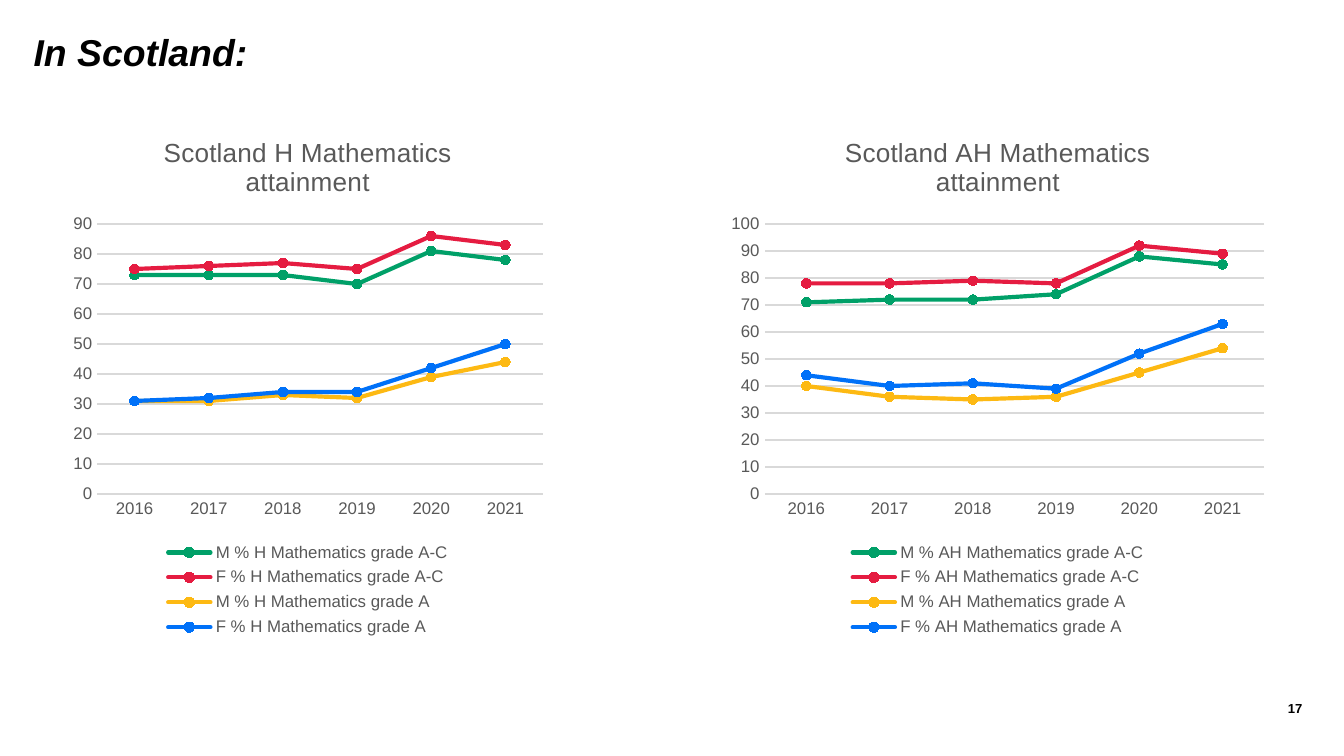
from lxml import etree
from pptx import Presentation
from pptx.chart.data import CategoryChartData
from pptx.dml.color import RGBColor
from pptx.enum.chart import (XL_CHART_TYPE, XL_LEGEND_POSITION as LegendPos,
                             XL_MARKER_STYLE as Marker, XL_TICK_MARK as Tick)
from pptx.enum.text import PP_ALIGN as Align
from pptx.oxml.ns import qn
from pptx.util import Inches, Pt

WIDTH = 10
HEIGHT = WIDTH * 9 / 16
FONT = "Arial"
BLACK, GREY, GRID = "000000", "595959", "D9D9D9"
YEARS = ["2016", "2017", "2018", "2019", "2020", "2021"]
CHART_TOP, CHART_HEIGHT = 0.84, 3.94

# Series label pattern and colour, in drawing order
GROUPS = [("M % {} Mathematics grade A-C", "00A068"),
          ("F % {} Mathematics grade A-C", "E51C41"),
          ("M % {} Mathematics grade A", "FDB913"),
          ("F % {} Mathematics grade A", "0071F8")]
HIGHER = [[73, 73, 73, 70, 81, 78], [75, 76, 77, 75, 86, 83],
          [31, 31, 33, 32, 39, 44], [31, 32, 34, 34, 42, 50]]
ADVANCED = [[71, 72, 72, 74, 88, 85], [78, 78, 79, 78, 92, 89],
            [40, 36, 35, 36, 45, 54], [44, 40, 41, 39, 52, 63]]


def rgb(value):
    return RGBColor.from_string(value)


def style_font(font, size, color, bold=False, italic=False):
    font.name, font.size = FONT, Pt(size)
    font.bold, font.italic = bold, italic
    font.color.rgb = rgb(color)


def style_line(line, color, width):
    line.color.rgb = rgb(color)
    line.width = Pt(width)


def add_text(slide, text, box, size, align=Align.LEFT, italic=False):
    frame = slide.shapes.add_textbox(*map(Inches, box)).text_frame
    frame.word_wrap = True
    frame.margin_left = frame.margin_right = 0
    frame.margin_top = frame.margin_bottom = 0
    paragraph = frame.paragraphs[0]
    paragraph.text, paragraph.alignment = text, align
    style_font(paragraph.font, size, BLACK, bold=True, italic=italic)
    return paragraph


def place_plot(chart, x, y, w, h):
    """Fix the inner plot area, in shares of the chart's size."""
    plot_area = chart._chartSpace.chart.plotArea
    for old in plot_area.findall(qn("c:layout")):
        plot_area.remove(old)
    layout = etree.Element(qn("c:layout"))
    manual = etree.SubElement(layout, qn("c:manualLayout"))
    settings = [("layoutTarget", "inner"), ("xMode", "edge"), ("yMode", "edge"),
                ("x", x), ("y", y), ("w", w), ("h", h)]
    for tag, value in settings:
        etree.SubElement(manual, qn(f"c:{tag}")).set("val", str(value))
    plot_area.insert(0, layout)


def style_axes(chart, top):
    years, percent = chart.category_axis, chart.value_axis
    for axis in (years, percent):
        axis.major_tick_mark = axis.minor_tick_mark = Tick.NONE
        style_font(axis.tick_labels.font, 9, GREY)
    style_line(years.format.line, GRID, 0.75)
    percent.format.line.fill.background()
    percent.has_major_gridlines = True
    style_line(percent.major_gridlines.format.line, GRID, 0.75)
    percent.minimum_scale, percent.maximum_scale = 0, top
    percent.major_unit = 10


def style_series(series, color):
    series.smooth = False
    style_line(series.format.line, color, 2.25)
    series.format.line._get_or_add_ln().set("cap", "rnd")
    marker = series.marker
    marker.style, marker.size = Marker.CIRCLE, 5
    marker.format.fill.solid()
    marker.format.fill.fore_color.rgb = rgb(color)
    style_line(marker.format.line, color, 0.75)


def add_attainment_chart(slide, level, values, left, width, plot_x, plot_w, top):
    data = CategoryChartData()
    data.categories = YEARS
    for (label, _), row in zip(GROUPS, values):
        data.add_series(label.format(level), row)
    box = map(Inches, (left, CHART_TOP, width, CHART_HEIGHT))
    chart = slide.shapes.add_chart(XL_CHART_TYPE.LINE_MARKERS, *box, data).chart
    style_font(chart.font, 10, BLACK)

    # Title and legend
    chart.has_title = True
    heading = chart.chart_title.text_frame.paragraphs[0]
    heading.text = f"Scotland {level} Mathematics attainment"
    style_font(heading.font, 14, GREY)
    chart.chart_title.include_in_layout = False
    chart.has_legend = True
    chart.legend.position = LegendPos.BOTTOM
    chart.legend.include_in_layout = False
    style_font(chart.legend.font, 9, GREY)

    # Plot, axes and lines
    place_plot(chart, plot_x, 0.21, plot_w, 0.51)
    style_axes(chart, top)
    chart.plots[0].vary_by_categories = False
    for series, (_, color) in zip(chart.plots[0].series, GROUPS):
        style_series(series, color)


def main():
    deck = Presentation()
    deck.slide_width, deck.slide_height = Inches(WIDTH), Inches(HEIGHT)
    slide = deck.slides.add_slide(deck.slide_layouts[6])

    # Heading and page number
    heading = add_text(slide, "In Scotland:", (0.25, 0.27, 9.23, 0.76), 20, italic=True)
    heading.line_spacing = Pt(20)
    add_text(slide, "17", (8.7, 5.21, 0.99, 0.3), 7, Align.RIGHT)

    # Higher on the left, Advanced Higher on the right
    add_attainment_chart(slide, "H", HIGHER, 0.47, 3.64, 0.07, 0.91, 90)
    add_attainment_chart(slide, "AH", ADVANCED, 5.36, 4.13, 0.08, 0.9, 100)

    deck.save("out.pptx")


if __name__ == "__main__":
    main()
